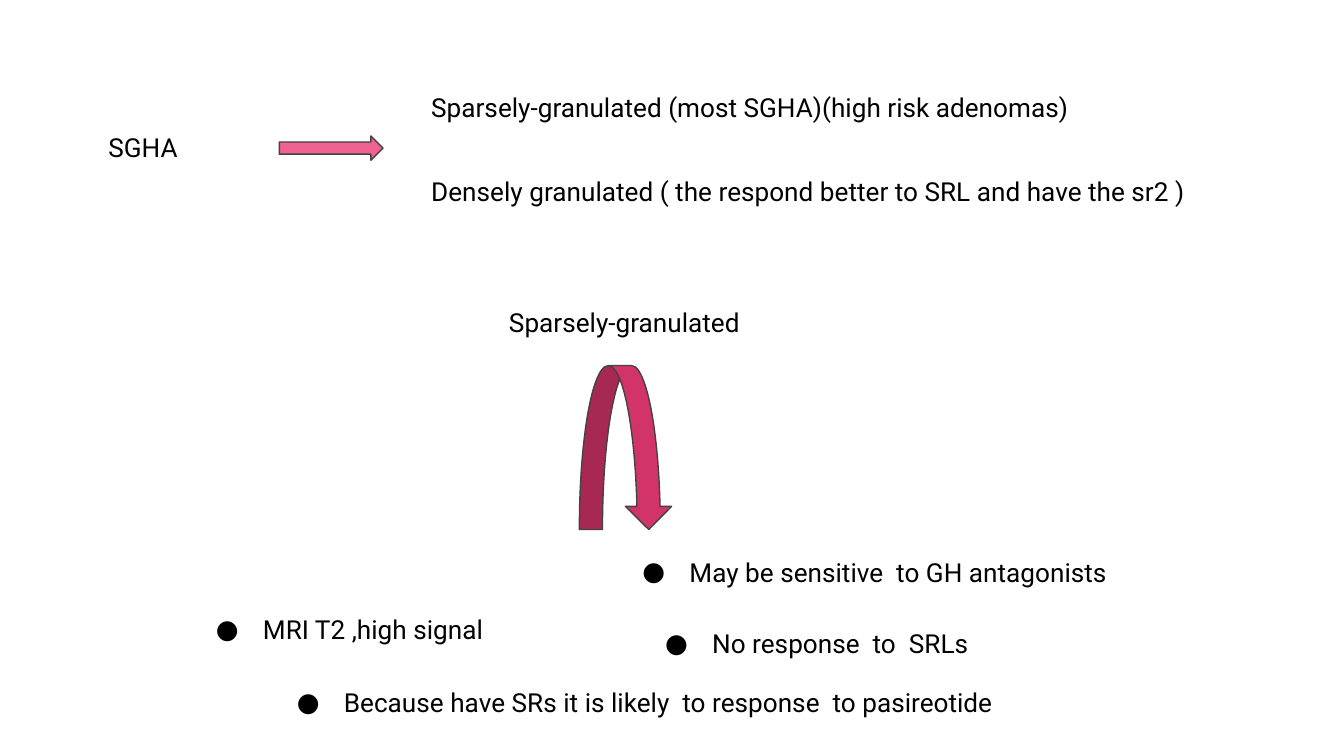
from lxml import etree
from pptx import Presentation
from pptx.dml.color import RGBColor
from pptx.enum import shapes, text
from pptx.oxml.ns import qn
from pptx.util import Cm, Pt

COLORS = {"ink": "000000", "outline": "434343", "pink": "F06292", "rose": "D23369"}
WIDTH, HEIGHT, INSET = 20.32, 1.09, 0.25

LABELS = [
    ("SGHA", 1.8, 2.24, WIDTH),
    ("Sparsely-granulated (most SGHA)(high risk adenomas)", 7.9, 1.47, WIDTH),
    ("Densely granulated ( the respond better to SRL and have the sr2 )", 7.9, 3.07, WIDTH),
    ("Sparsely-granulated", 9.37, 5.54, WIDTH),
]
FINDINGS = [
    ("MRI T2 ,high signal", 3.45, 11.35, WIDTH),
    ("No response  to  SRLs", 11.94, 11.61, 20.98),
    ("May be sensitive  to GH antagonists", 11.51, 10.26, WIDTH),
    ("Because have SRs it is likely  to response  to pasireotide", 4.98, 12.73, 24.74),
]
ARROWS = [
    (shapes.MSO_SHAPE.RIGHT_ARROW, (5.28, 2.57, 1.96, 0.46), "pink", (0.5, 0.5)),
    (shapes.MSO_SHAPE.CURVED_DOWN_ARROW, (10.95, 6.91, 1.75, 3.1), "rose", (0.25, 0.5, 0.25)),
]
FRAME_FORMAT = {
    "word_wrap": True,
    "auto_size": text.MSO_AUTO_SIZE.SHAPE_TO_FIT_TEXT,
    "vertical_anchor": text.MSO_ANCHOR.TOP,
    **{f"margin_{side}": Cm(INSET) for side in ("left", "top", "right", "bottom")},
}
FONT_FORMAT = {"name": "Roboto", "size": Pt(14)}


def color(name):
    return RGBColor.from_string(COLORS[name])


def apply(target, values):
    for key, value in values.items():
        setattr(target, key, value)


def add_bullet(paragraph):
    properties = paragraph._p.get_or_add_pPr()
    properties.set("marL", str(Cm(1.27)))
    properties.set("indent", str(Cm(-0.89)))
    bullet_color = etree.SubElement(properties, qn("a:buClr"))
    etree.SubElement(bullet_color, qn("a:srgbClr"), val=COLORS["ink"])
    etree.SubElement(properties, qn("a:buFont"), typeface=FONT_FORMAT["name"])
    etree.SubElement(properties, qn("a:buChar"), char="●")


def add_statement(slide, wording, left, top, width, bulleted):
    frame = slide.shapes.add_textbox(Cm(left), Cm(top), Cm(width), Cm(HEIGHT)).text_frame
    apply(frame, FRAME_FORMAT)
    paragraph = frame.paragraphs[0]
    if bulleted:
        add_bullet(paragraph)
    statement = paragraph.add_run()
    statement.text = wording
    apply(statement.font, FONT_FORMAT)
    statement.font.color.rgb = color("ink")


def add_arrow(slide, preset, place, fill, adjustments):
    arrow = slide.shapes.add_shape(preset, *map(Cm, place))
    arrow.shadow.inherit = False
    arrow.fill.solid()
    arrow.fill.fore_color.rgb = color(fill)
    arrow.line.color.rgb = color("outline")
    arrow.line.width = Pt(0.75)
    for index, value in enumerate(adjustments):
        arrow.adjustments[index] = value


def main():
    deck = Presentation()
    apply(deck, {"slide_width": Cm(25.4), "slide_height": Cm(14.29)})
    slide = deck.slides.add_slide(deck.slide_layouts[6])
    for arrow in ARROWS:
        add_arrow(slide, *arrow)
    for statements, bulleted in ((LABELS, False), (FINDINGS, True)):
        for statement in statements:
            add_statement(slide, *statement, bulleted)
    deck.save("out.pptx")


if __name__ == "__main__":
    main()
